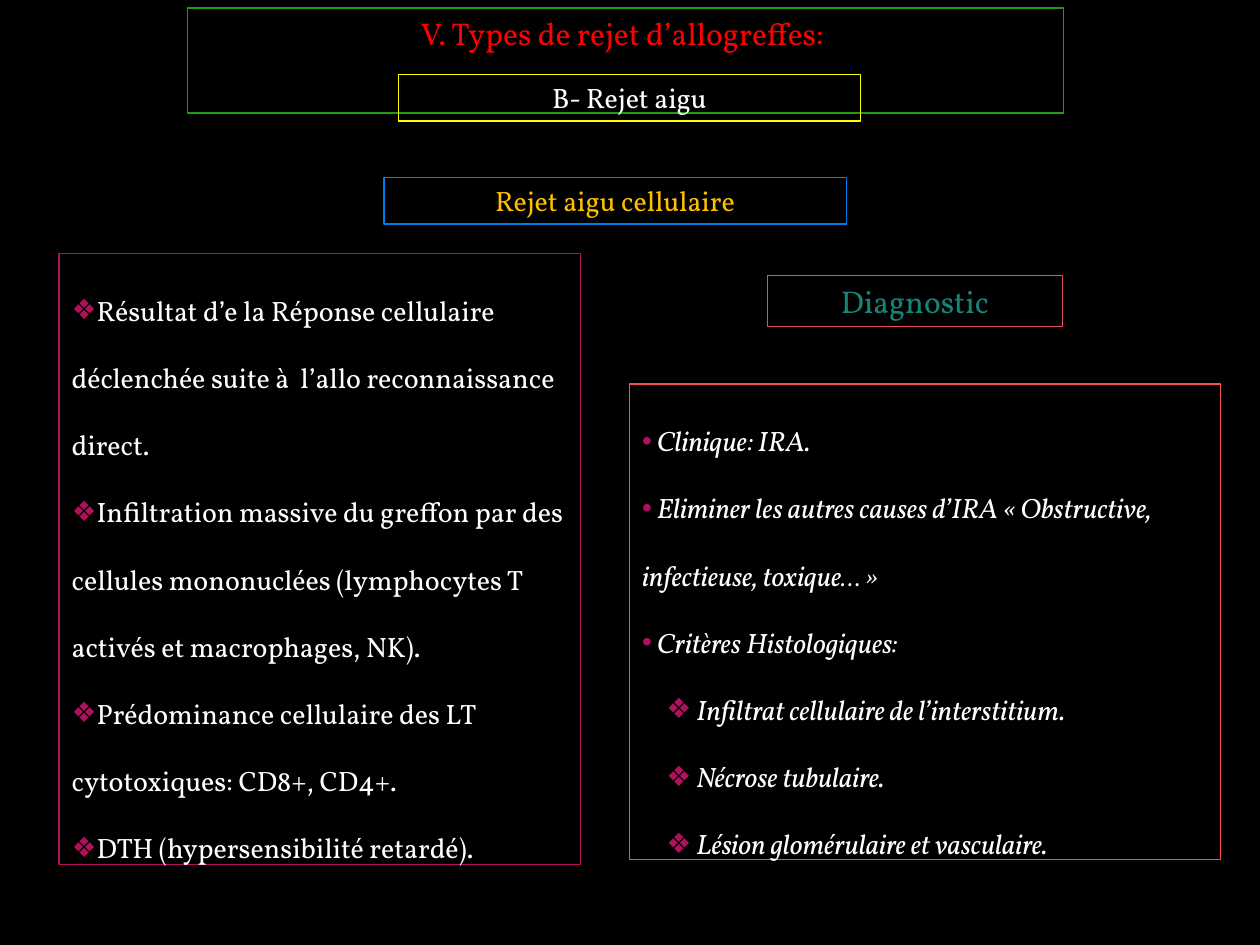
from dataclasses import dataclass

from lxml import etree
from pptx import Presentation
from pptx.dml.color import RGBColor
from pptx.enum.shapes import MSO_SHAPE
from pptx.enum.text import MSO_ANCHOR, MSO_AUTO_SIZE, PP_ALIGN
from pptx.oxml.ns import qn
from pptx.util import Cm, Pt

RECTANGLE = MSO_SHAPE.RECTANGLE
TOP = MSO_ANCHOR.TOP
GROW = MSO_AUTO_SIZE.SHAPE_TO_FIT_TEXT
CENTER, LEFT = PP_ALIGN.CENTER, PP_ALIGN.LEFT
TWO_CONTENT_LAYOUT = 3
DIAMOND, DOT = "❖", "•"
SUB_ITEM = (Cm(0.74), Cm(-0.25))  # left margin, first-line indent
FLUSH = (Cm(0), Cm(0))


@dataclass(frozen=True)
class Theme:
    font: str = "Vollkorn"
    heading_size: int = 18
    text_size: int = 16
    line_width: float = 0.75
    background: str = "000000"
    text: str = "FFFFFF"
    bullet: str = "B0105C"
    title: str = "FF0000"
    title_border: str = "219B11"
    section_border: str = "FFFF00"
    subject: str = "FFC000"
    subject_border: str = "007EEB"
    diagnosis: str = "138677"
    diagnosis_border: str = "E74B65"
    criteria_border: str = "FF5050"


class SlideBuilder:
    """Holds the theme and the slide being filled."""

    def __init__(self, slide, theme):
        self.slide = slide
        self.theme = theme
        fill = slide.background.fill
        fill.solid()
        fill.fore_color.rgb = RGBColor.from_string(theme.background)

    def frame(self, shape, box, border):
        """Place a shape and give it a thin border and a text area."""
        shape.left, shape.top, shape.width, shape.height = map(Cm, box)
        shape.fill.background()
        shape.line.color.rgb = RGBColor.from_string(border)
        shape.line.width = Pt(self.theme.line_width)
        text_frame = shape.text_frame
        text_frame.word_wrap = True
        text_frame.auto_size = GROW
        text_frame.vertical_anchor = TOP

    def format_paragraph(self, paragraph, alignment, size, color, italic=False):
        paragraph.alignment = alignment
        paragraph.space_before = Pt(0)
        for run in paragraph.runs:
            run.font.name = self.theme.font
            run.font.size = Pt(size)
            run.font.italic = italic
            run.font.color.rgb = RGBColor.from_string(color)

    def heading(self, shape, text, box, border, size, color):
        self.frame(shape, box, border)
        shape.text_frame.text = text
        self.format_paragraph(shape.text_frame.paragraphs[0], CENTER, size, color)

    def title(self, text, box, border, color):
        self.heading(self.slide.shapes.title, text, box, border,
                     self.theme.heading_size, color)

    def label(self, text, box, border, size, color):
        shape = self.slide.shapes.add_shape(RECTANGLE, *map(Cm, box))
        shape.shadow.inherit = False
        self.heading(shape, text, box, border, size, color)

    def bullet_list(self, index, items, box, border, italic=False):
        """Fill a body placeholder with (text, bullet, indent) items."""
        shape = self.slide.placeholders[index]
        self.frame(shape, box, border)
        shape.text_frame.text = "\n".join(text for text, _, _ in items)
        for paragraph, (_, bullet, indent) in zip(shape.text_frame.paragraphs, items):
            self.format_paragraph(paragraph, LEFT, self.theme.text_size,
                                  self.theme.text, italic)
            paragraph.line_spacing = 2.0
            self.set_bullet(paragraph, bullet, indent)

    def set_bullet(self, paragraph, bullet, indent):
        properties = paragraph._p.get_or_add_pPr()
        for name, length in zip(("marL", "indent"), indent):
            properties.set(name, str(int(length)))
        color = etree.SubElement(properties, qn("a:buClr"))
        etree.SubElement(color, qn("a:srgbClr"), val=self.theme.bullet)
        etree.SubElement(properties, qn("a:buChar"), char=bullet)


def main():
    presentation = Presentation()
    presentation.slide_width, presentation.slide_height = Cm(25.4), Cm(19.05)
    slide = presentation.slides.add_slide(
        presentation.slide_layouts[TWO_CONTENT_LAYOUT])
    theme = Theme()
    builder = SlideBuilder(slide, theme)

    builder.title("V. Types de rejet d’allogreffes: ", (3.78, 0.16, 17.66, 1.02),
                  theme.title_border, theme.title)
    builder.label("B- Rejet aigu", (8.03, 1.5, 9.32, 0.94),
                  theme.section_border, theme.text_size, theme.text)
    builder.label("Rejet aigu cellulaire", (7.74, 3.58, 9.32, 0.94),
                  theme.subject_border, theme.text_size, theme.subject)

    mechanisms = [
        "Résultat d’e la Réponse cellulaire déclenchée suite à  l’allo "
        "reconnaissance direct.",
        "Infiltration massive du greffon par des cellules mononuclées "
        "(lymphocytes T activés et macrophages, NK).",
        "Prédominance cellulaire des LT cytotoxiques: CD8+, CD4+.",
        "DTH (hypersensibilité retardé).",
    ]
    builder.bullet_list(1, [(text, DIAMOND, FLUSH) for text in mechanisms],
                        (1.19, 5.11, 10.52, 12.57), theme.bullet)

    criteria = [
        (" Clinique: IRA.", DOT, FLUSH),
        (" Eliminer les autres causes d’IRA « Obstructive, infectieuse, "
         "toxique… »", DOT, FLUSH),
        (" Critères Histologiques:", DOT, FLUSH),
        (" Infiltrat cellulaire de l’interstitium.", DIAMOND, SUB_ITEM),
        (" Nécrose tubulaire.", DIAMOND, SUB_ITEM),
        (" Lésion glomérulaire et vasculaire.", DIAMOND, SUB_ITEM),
    ]
    builder.bullet_list(2, criteria, (12.69, 7.74, 11.92, 9.83),
                        theme.criteria_border, italic=True)
    builder.label("Diagnostic", (15.47, 5.56, 5.95, 1.02),
                  theme.diagnosis_border, theme.heading_size, theme.diagnosis)

    presentation.save("out.pptx")


if __name__ == "__main__":
    main()
